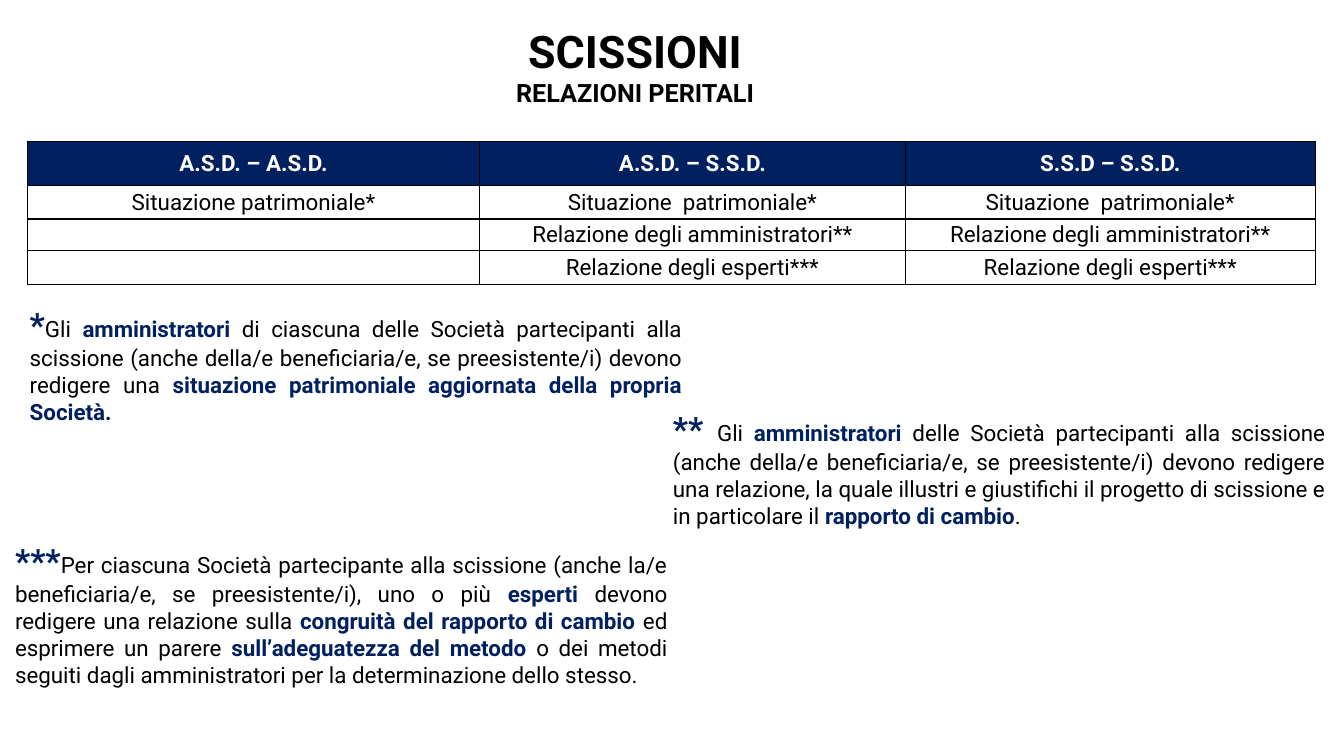
from lxml import etree
from pptx import Presentation
from pptx.dml.color import RGBColor
from pptx.enum.text import MSO_ANCHOR, MSO_AUTO_SIZE, PP_ALIGN
from pptx.oxml.ns import qn
from pptx.util import Cm, Pt

CENTER = PP_ALIGN.CENTER
JUSTIFY = PP_ALIGN.JUSTIFY
TOP = MSO_ANCHOR.TOP
MIDDLE = MSO_ANCHOR.MIDDLE
NO_AUTOFIT = MSO_AUTO_SIZE.NONE

NAVY = RGBColor(0x00, 0x20, 0x60)
BLACK = RGBColor(0x00, 0x00, 0x00)
WHITE = RGBColor(0xFF, 0xFF, 0xFF)
FONT = "Roboto"
NOTE_WIDTH = 16.94

TITLE_LINES = [("SCISSIONI", 32), ("RELAZIONI PERITALI", 18)]

COLUMN_WIDTHS = [11.4, 10.72, 10.34]
ROW_HEIGHTS = [1.12, 0.84, 0.78, 0.86]
TABLE_ROWS = [
    ["A.S.D. – A.S.D.", "A.S.D. – S.S.D.", "S.S.D – S.S.D."],
    ["Situazione patrimoniale*", "Situazione  patrimoniale*", "Situazione  patrimoniale*"],
    ["", "Relazione degli amministratori**", "Relazione degli amministratori**"],
    ["", "Relazione degli esperti***", "Relazione degli esperti***"],
]

NOTES = [
    (0.5, 7.54, 2.64, [
        "*", "Gli ", "amministratori ",
        "di ciascuna delle Società partecipanti alla scissione (anche della/e "
        "beneficiaria/e, se preesistente/i) devono redigere una ",
        "situazione patrimoniale aggiornata della propria Società. ",
    ]),
    (16.71, 10.16, 3.33, [
        "** ", "Gli ", "amministratori",
        " delle Società partecipanti alla scissione (anche della/e beneficiaria/e, "
        "se preesistente/i) devono redigere una relazione, la quale illustri e "
        "giustifichi il progetto di scissione e in particolare il ",
        "rapporto di cambio", ".",
    ]),
    (0.13, 13.49, 4.01, [
        "***",
        "Per ciascuna Società partecipante alla scissione (anche la/e "
        "beneficiaria/e, se preesistente/i), uno o più ",
        "esperti ", "devono redigere una relazione sulla ",
        "congruità del rapporto di cambio ", "ed esprimere un parere ",
        "sull’adeguatezza del metodo ",
        "o dei metodi seguiti dagli amministratori per la determinazione dello stesso.",
    ]),
]


def set_attributes(target, values):
    for name, value in values.items():
        setattr(target, name, value)


def add_run(paragraph, text, size, color, bold):
    run = paragraph.add_run()
    run.text = text
    set_attributes(run.font, {"name": FONT, "size": Pt(size), "bold": bold})
    run.font.color.rgb = color


def format_title(title):
    set_attributes(title, {"left": Cm(2.29), "top": Cm(0.46),
                           "width": Cm(27.43), "height": Cm(2.39)})
    frame = title.text_frame
    set_attributes(frame, {"word_wrap": True, "auto_size": NO_AUTOFIT,
                           "vertical_anchor": TOP})
    for index, (text, size) in enumerate(TITLE_LINES):
        paragraph = frame.add_paragraph() if index else frame.paragraphs[0]
        paragraph.alignment = CENTER
        add_run(paragraph, text, size, BLACK, True)


def add_borders(cell):
    properties = cell._tc.get_or_add_tcPr()
    for side in ("a:lnL", "a:lnR", "a:lnT", "a:lnB"):
        line = etree.SubElement(properties, qn(side), w=str(Pt(1)))
        fill = etree.SubElement(line, qn("a:solidFill"))
        etree.SubElement(fill, qn("a:srgbClr"), val=str(BLACK))


def format_cell(cell, text, is_header):
    set_attributes(cell, {"margin_left": Cm(0.02), "margin_right": Cm(0.02),
                          "margin_top": Cm(0.02), "margin_bottom": Cm(0),
                          "vertical_anchor": MIDDLE})
    add_borders(cell)
    cell.fill.solid()
    cell.fill.fore_color.rgb = NAVY if is_header else WHITE
    if text:
        paragraph = cell.text_frame.paragraphs[0]
        paragraph.alignment = CENTER
        add_run(paragraph, text, 16, WHITE if is_header else BLACK, is_header)


def add_report_table(slide):
    table = slide.shapes.add_table(
        len(ROW_HEIGHTS), len(COLUMN_WIDTHS), Cm(0.69), Cm(3.56),
        Cm(sum(COLUMN_WIDTHS)), Cm(sum(ROW_HEIGHTS))).table
    for column, width in zip(table.columns, COLUMN_WIDTHS):
        column.width = Cm(width)
    for row_index, (height, texts) in enumerate(zip(ROW_HEIGHTS, TABLE_ROWS)):
        table.rows[row_index].height = Cm(height)
        for column_index, text in enumerate(texts):
            format_cell(table.cell(row_index, column_index), text, row_index == 0)


def add_note(slide, left, top, height, parts):
    box = slide.shapes.add_textbox(Cm(left), Cm(top), Cm(NOTE_WIDTH), Cm(height))
    box.text_frame.word_wrap = True
    paragraph = box.text_frame.paragraphs[0]
    paragraph.alignment = JUSTIFY
    for index, text in enumerate(parts):
        highlighted = index % 2 == 0
        size = 16 if index else 24
        add_run(paragraph, text, size, NAVY if highlighted else BLACK, highlighted)


def main():
    presentation = Presentation()
    set_attributes(presentation, {"slide_width": Cm(33.87), "slide_height": Cm(19.05)})
    slide = presentation.slides.add_slide(presentation.slide_layouts[5])
    format_title(slide.shapes.title)
    add_report_table(slide)
    for note in NOTES:
        add_note(slide, *note)
    presentation.save("out.pptx")


if __name__ == "__main__":
    main()
